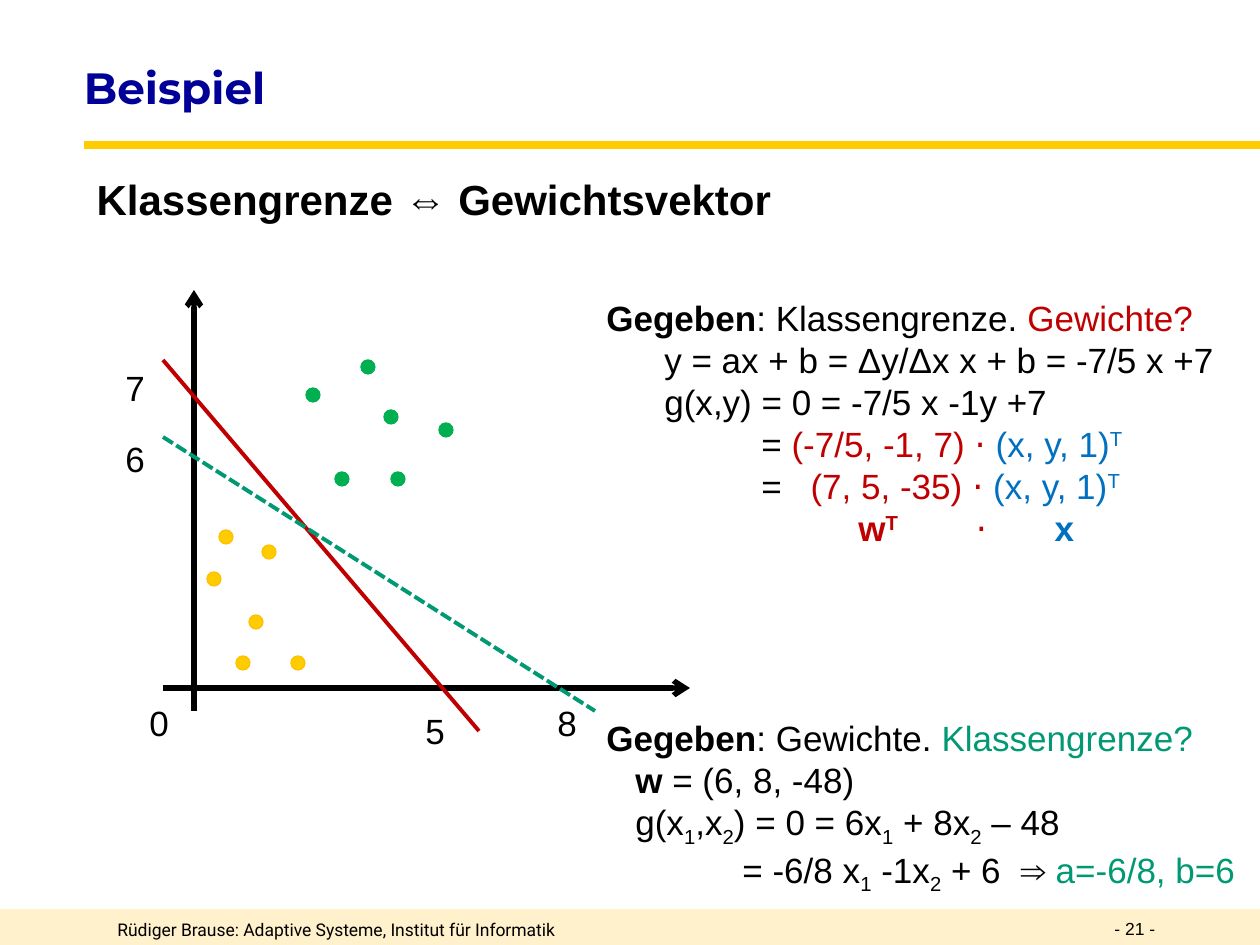
from pptx import Presentation
from pptx.dml.color import RGBColor
from pptx.enum.dml import MSO_LINE
from pptx.enum.shapes import MSO_CONNECTOR, MSO_SHAPE
from pptx.enum.text import MSO_ANCHOR, MSO_AUTO_SIZE, PP_ALIGN
from pptx.oxml.ns import qn
from pptx.util import Emu, Pt
from lxml.etree import SubElement

BLACK, RED, BLUE, TEAL = "000000", "C00000", "0070C0", "009973"
GREEN, GOLD = "00B050", "FFCC00"

TITLE = "Beispiel"
HEAD = "Klassengrenze ⇔ Gewichtsvektor"
FOOT = [("Rüdiger Brause: Adaptive Systeme, Institut für Informatik", "Roboto", (105, 913, 683, 32)),
        ("- 21 -", "Arial", (1102, 912, 95, 33))]

# Axis labels: text, left, top
LABELS = [("7", 113, 360), ("6", 113, 431), ("0", 137, 695), ("5", 413, 703), ("8", 545, 695)]

# Points of the two classes: fill, outline, left and top of each dot
DOT = 14
CLASSES = [
    (GREEN, GREEN, [(306, 388), (361, 360), (384, 410), (335, 472), (391, 472), (439, 423)]),
    (GOLD, "FFC000", [(207, 572), (262, 545), (249, 615), (236, 656), (291, 656), (219, 530)]),
]

# Lines: from, to, colour, width, arrow, dashed
AXES = [((163, 688), (690, 688), BLACK, 3, True, False),
        ((194, 711), (194, 290), BLACK, 3, True, False)]
BOUNDS = [((163, 360), (479, 731), RED, 2.25, False, False),
          ((163, 437), (595, 711), TEAL, 2.25, False, True)]

# Paragraphs: indent, runs of (text, colour, style, added letter spacing)
# Style: b bold, ^ superscript, _ subscript
VECTOR = [("(x, y, 1)", BLUE, "", 0), ("T", BLUE, "^", 0)]
WEIGHTS = [
    (0, [("Gegeben", BLACK, "b", 0), (": Klassengrenze. ", BLACK, "", 0),
         ("Gewichte?", RED, "", 0)]),
    (58, [("y = ax + b = Δy/Δx x + b = -7/5 x +7", BLACK, "", 0)]),
    (58, [("g(x,y) = 0 = -7/5 x -1y +7", BLACK, "", 0)]),
    (155, [("= ", BLACK, "", 0), ("(-7/5, -1, 7) ⋅ ", RED, "", 0)] + VECTOR),
    (155, [("=", BLACK, "", 0), (" ", BLACK, "", 19), ("(7, 5, -35) ⋅ ", RED, "", 0)] + VECTOR),
    (252, [("w", RED, "b", 0), ("T", RED, "b^", 0), (" ", RED, "", 68), ("⋅", RED, "", 0),
           (" ", RED, "", 58), ("x", BLUE, "b", 0)]),
]
BORDER = [
    (0, [("Gegeben", BLACK, "b", 0), (": Gewichte. ", BLACK, "", 0),
         ("Klassengrenze?", TEAL, "", 0)]),
    (29, [("w", BLACK, "b", 0), (" = (6, 8, -48)", BLACK, "", 0)]),
    (29, [("g(x", BLACK, "", 0), ("1", BLACK, "_", 0), (",x", BLACK, "", 0),
          ("2", BLACK, "_", 0), (") = 0 = 6x", BLACK, "", 0), ("1", BLACK, "_", 0),
          (" + 8x", BLACK, "", 0), ("2", BLACK, "_", 0), (" – 48", BLACK, "", 0)]),
    (136, [("= -6/8 x", BLACK, "", 0), ("1", BLACK, "_", 0), (" -1x", BLACK, "", 0),
           ("2", BLACK, "_", 0), (" + 6", BLACK, "", 0), (" ", BLACK, "", 10),
           ("⇒ ", BLACK, "", 0), ("a=-6/8, b=6", TEAL, "", 0)]),
]
PROOFS = [((594, 290, 666, 310), WEIGHTS), ((594, 710, 666, 183), BORDER)]


def px(n):
    return Emu(round(n * 914400 / 126))


def rgb(code):
    return RGBColor.from_string(code)


def style(font, name, size, color=None, bold=None):
    font.name, font.size = name, Pt(size)
    if color:
        font.color.rgb = rgb(color)
    if bold is not None:
        font.bold = bold


def place(shape, box):
    shape.left, shape.top, shape.width, shape.height = map(px, box)


def indent(para, left):
    props = para._p.get_or_add_pPr()
    props.set("marL", str(px(left)))
    props.set("indent", "0")
    return props


def text_box(box):
    frame = slide.shapes.add_textbox(*map(px, box)).text_frame
    frame.word_wrap = True
    return frame


def label(text, box, name, size):
    para = text_box(box).paragraphs[0]
    para.text = text
    style(para.font, name, size, BLACK)


def shape(kind, box, fill, line=None):
    item = slide.shapes.add_shape(kind, *map(px, box))
    item.shadow.inherit = False
    item.fill.solid()
    item.fill.fore_color.rgb = rgb(fill)
    if line:
        item.line.color.rgb = rgb(line)
        item.line.width = Pt(0.75)
    else:
        item.line.fill.background()
    return item


def line(start, end, color, width, arrow=False, dash=False):
    item = slide.shapes.add_connector(MSO_CONNECTOR.STRAIGHT, *map(px, start + end))
    item.line.color.rgb = rgb(color)
    item.line.width = Pt(width)
    if dash:
        item.line.dash_style = MSO_LINE.SQUARE_DOT
    if arrow:
        SubElement(item.line._get_or_add_ln(), qn("a:tailEnd"), type="arrow")
    SubElement(item._element.spPr, qn("a:effectLst"))


def proof(box, rows):
    frame = text_box(box)
    for i, (left, runs) in enumerate(rows):
        para = frame.add_paragraph() if i else frame.paragraphs[0]
        indent(para, left)
        style(para.font, "Arial", 20)
        for text, color, marks, gap in runs:
            run = para.add_run()
            run.text = text
            run.font.color.rgb = rgb(color)
            if "b" in marks:
                run.font.bold = True
            if "^" in marks:
                run.font._element.set("baseline", "30000")
            if "_" in marks:
                run.font._element.set("baseline", "-25000")
            if gap:
                run.font._element.set("spc", str(round(px(gap).pt * 100)))


deck = Presentation()
deck.slide_width, deck.slide_height = px(1260), px(945)
slide = deck.slides.add_slide(deck.slide_layouts[1])

# Footer band and title rule
band = shape(MSO_SHAPE.RECTANGLE, (0, 909, 1260, 36), "FFE499")
SubElement(band.fill._xPr.find(qn("a:solidFill"))[0], qn("a:alpha"), val="50000")
line((84, 145), (1260, 145), GOLD, 4.5)
for text, name, box in FOOT:
    label(text, box, name, 10)

# Title and heading
title, body = slide.placeholders
place(title, (84, 53, 912, 69))
place(body, (84, 175, 1142, 79))
for item, text, name, size, color in [(title, TITLE, "Montserrat", 25, "000099"),
                                      (body, HEAD, "Arial", 24, BLACK)]:
    frame = item.text_frame
    frame.auto_size = MSO_AUTO_SIZE.NONE
    para = frame.paragraphs[0]
    para.text = text
    SubElement(indent(para, 0), qn("a:buNone"))
    para.alignment = PP_ALIGN.LEFT
    para.space_before = Pt(0)
    style(para.font, name, size, color, True)
title.text_frame.margin_left = 0
title.text_frame.vertical_anchor = MSO_ANCHOR.MIDDLE
body.text_frame.vertical_anchor = MSO_ANCHOR.TOP
body.text_frame.paragraphs[0].line_spacing = 0.85

# Diagram
for axis in AXES:
    line(*axis)
for fill, edge, dots in CLASSES:
    for x, y in dots:
        shape(MSO_SHAPE.OVAL, (x, y, DOT, DOT), fill, edge)
for bound in BOUNDS:
    line(*bound)
for text, x, y in LABELS:
    label(text, (x, y, 49, 55), "Arial", 20)

# Derivations
for box, rows in PROOFS:
    proof(box, rows)

deck.save("out.pptx")
